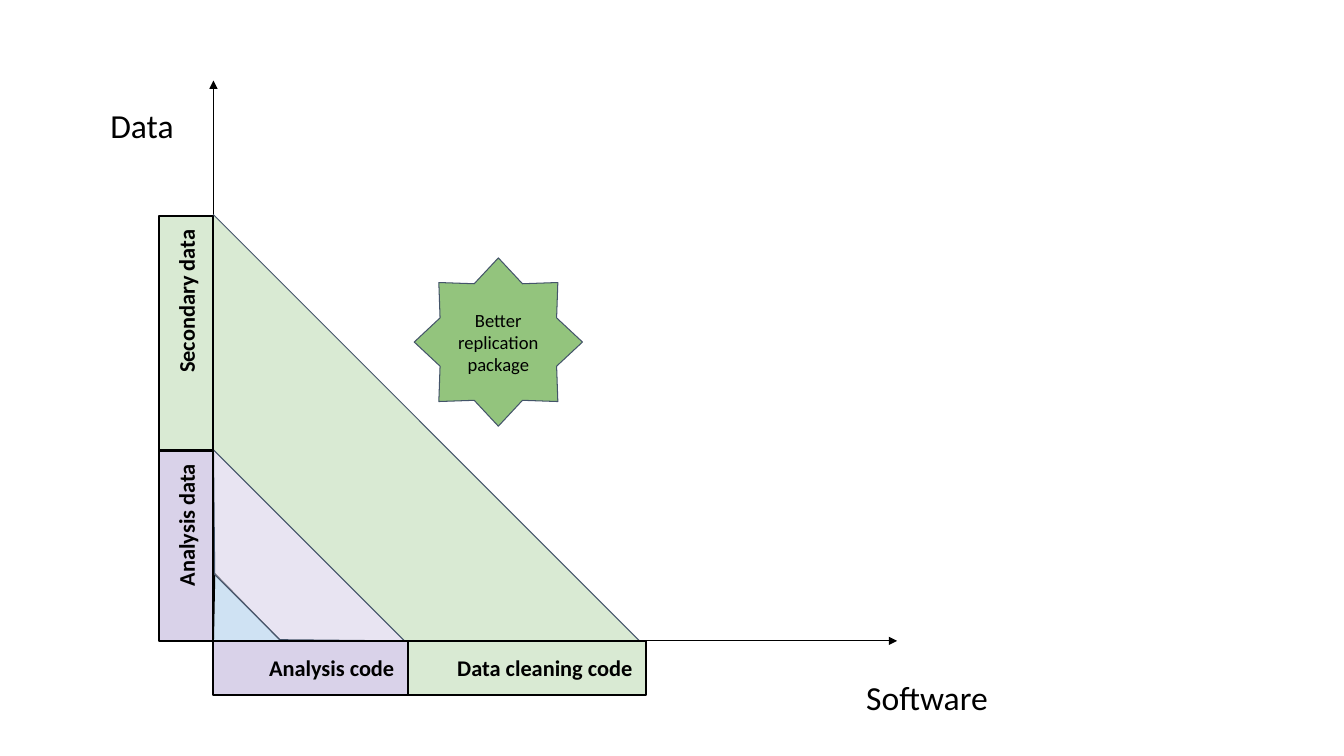
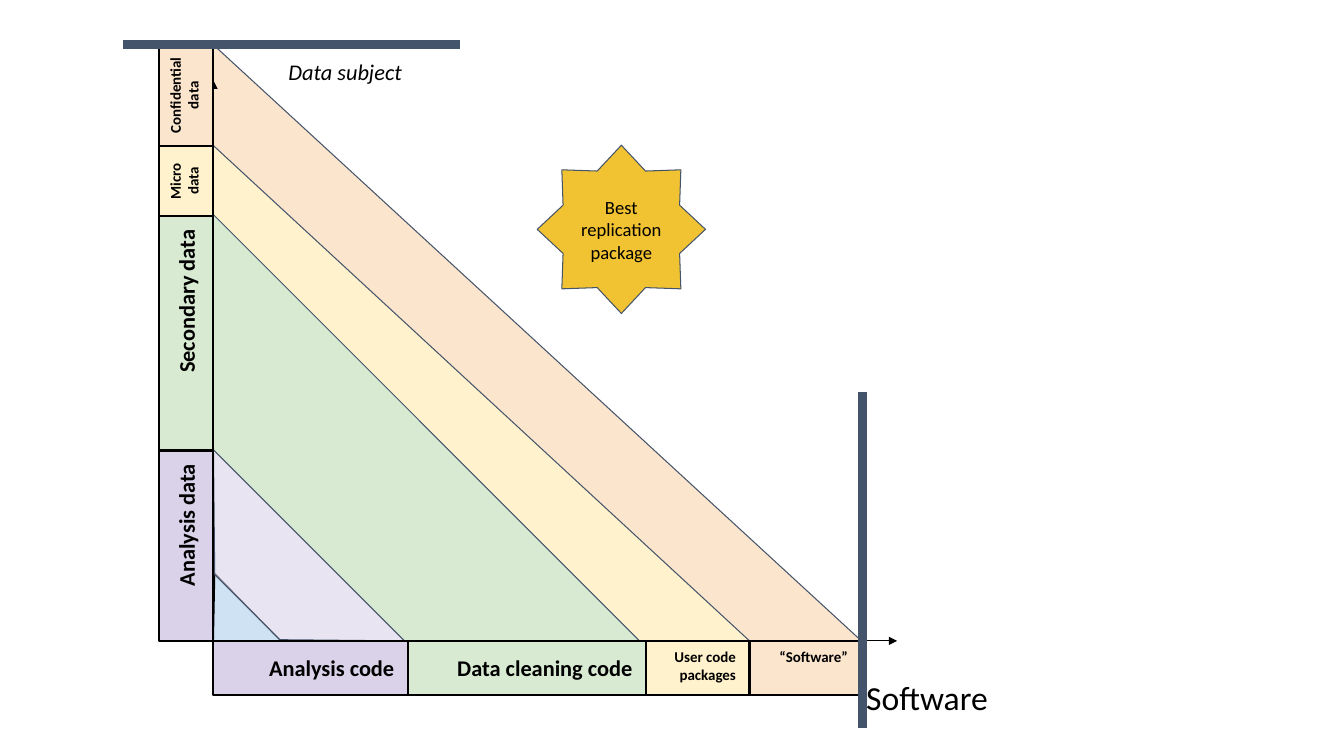
from itertools import accumulate
from math import sqrt
from typing import NamedTuple

from lxml import etree
from pptx import Presentation
from pptx.dml.color import RGBColor
from pptx.enum.shapes import MSO_CONNECTOR, MSO_SHAPE
from pptx.enum.text import MSO_ANCHOR, PP_ALIGN
from pptx.oxml.ns import qn
from pptx.util import Cm, Pt

RECTANGLE = MSO_SHAPE.RECTANGLE
TRIANGLE = MSO_SHAPE.ISOSCELES_TRIANGLE
TRAPEZOID = MSO_SHAPE.TRAPEZOID
STRIPE = MSO_SHAPE.DIAGONAL_STRIPE
STAR = MSO_SHAPE.STAR_8_POINT
STRAIGHT = MSO_CONNECTOR.STRAIGHT
TOP, MIDDLE = MSO_ANCHOR.TOP, MSO_ANCHOR.MIDDLE
LEFT, CENTER, RIGHT = PP_ALIGN.LEFT, PP_ALIGN.CENTER, PP_ALIGN.RIGHT

BLACK = RGBColor(0x00, 0x00, 0x00)
SLATE = RGBColor(0x44, 0x54, 0x6A)
BLUE = RGBColor(0xCF, 0xE2, 0xF3)
PURPLE = RGBColor(0xD9, 0xD2, 0xE9)
GREEN = RGBColor(0xD9, 0xEA, 0xD3)
YELLOW = RGBColor(0xFF, 0xF2, 0xCC)
ORANGE = RGBColor(0xFC, 0xE5, 0xCD)
STAR_GREEN = RGBColor(0x93, 0xC4, 0x7D)
STAR_GOLD = RGBColor(0xF1, 0xC2, 0x32)

FONT = "Calibri"
ORIGIN_X, ORIGIN_Y = 5.38, 16.15
BLOCK_DEPTH = 1.37
CORE_REACH = 1.7
PAD = 0.34
WIDE_INSETS = (PAD, PAD, PAD, PAD)
SMALL_INSETS = (PAD, 0.17, PAD, 0)
TIGHT_INSETS = (0, 0.17, 0, 0)


class Box(NamedTuple):
    """Area on the slide, in centimetres."""

    left: float
    top: float
    width: float
    height: float


class Block(NamedTuple):
    """Labelled stretch of an axis."""

    text: str
    length: float
    fill: RGBColor
    size: float = 16
    align: PP_ALIGN = RIGHT
    insets: tuple = WIDE_INSETS


CODE_BLOCKS = [
    Block("Analysis code", 4.9, PURPLE),
    Block("Data cleaning code", 6, GREEN),
    Block("User code packages", 2.61, YELLOW, 10.7, RIGHT, SMALL_INSETS),
    Block("“Software”", 2.82, ORANGE, 10.7, RIGHT, SMALL_INSETS),
]
DATA_BLOCKS = [
    Block("Analysis data", 4.8, PURPLE),
    Block("Secondary data", 5.9, GREEN),
    Block("Micro data", 1.78, YELLOW, 10.7, CENTER, SMALL_INSETS),
    Block("Confidential data", 2.54, ORANGE, 10.7, CENTER, TIGHT_INSETS),
]


def write_text(shape, text, size=16, bold=False, italic=False, align=LEFT,
               anchor=TOP, insets=WIDE_INSETS):
    """Put one formatted paragraph into a shape."""
    frame = shape.text_frame
    frame.word_wrap = True
    frame.vertical_anchor = anchor
    (frame.margin_left, frame.margin_top,
     frame.margin_right, frame.margin_bottom) = map(Cm, insets)
    paragraph = frame.paragraphs[0]
    paragraph.alignment = align
    run = paragraph.add_run()
    run.text = text
    run.font.name = FONT
    run.font.size = Pt(size)
    run.font.bold = bold
    run.font.italic = italic
    run.font.color.rgb = BLACK


def add_label(slide, box, text, **text_format):
    """Add a text box."""
    write_text(slide.shapes.add_textbox(*map(Cm, box)), text, **text_format)


def add_filled(slide, kind, box, fill, line=SLATE, line_width=0.75,
               rotation=0, adjustment=None):
    """Add a preset shape; a quarter turn keeps the visible box."""
    left, top, width, height = box
    if rotation == 270:
        left += (width - height) / 2
        top += (height - width) / 2
        width, height = height, width
    shape = slide.shapes.add_shape(
        kind, Cm(left), Cm(top), Cm(width), Cm(height))
    shape.shadow.inherit = False
    shape.rotation = rotation
    shape.fill.solid()
    shape.fill.fore_color.rgb = fill
    shape.line.color.rgb = line
    shape.line.width = Pt(line_width)
    if adjustment is not None:
        shape.adjustments[0] = adjustment
    return shape


def set_opacity(shape, percent):
    """Make a solid fill partly transparent."""
    color = shape.fill._xPr.find(qn("a:solidFill"))[0]
    etree.SubElement(color, qn("a:alpha")).set("val", str(percent * 1000))


def add_line(slide, start, end, color=BLACK, width=0.75, arrow=False):
    """Add a straight line, with an arrowhead at its end if asked."""
    connector = slide.shapes.add_connector(STRAIGHT, *map(Cm, start + end))
    connector.line.color.rgb = color
    connector.line.width = Pt(width)
    if arrow:
        outline = connector.line._get_or_add_ln()
        etree.SubElement(outline, qn("a:tailEnd")).set("type", "triangle")
    etree.SubElement(connector._element.spPr, qn("a:effectLst"))


def draw_axes(slide):
    """Draw both arrows and the name of the software axis."""
    origin = (ORIGIN_X, ORIGIN_Y)
    add_line(slide, origin, (ORIGIN_X, 2.03), arrow=True)
    add_line(slide, origin, (22.61, ORIGIN_Y), arrow=True)
    add_label(slide, Box(21.49, 16.71, 11, 1.7), "Software", size=24)


def draw_stripe(slide, reach_x, reach_y, fill):
    """Draw an outer band spanning the given reach on both axes."""
    box = Box(ORIGIN_X, ORIGIN_Y - reach_y, reach_x, reach_y)
    add_filled(slide, STRIPE, box, fill, rotation=270, adjustment=0.79)


def draw_band(slide, reach, depth, fill, adjustment):
    """Draw a 45 degree band whose long edge meets both axes at reach."""
    width = reach * sqrt(2)
    offset = (reach - depth / sqrt(2)) / 2
    box = Box(ORIGIN_X + offset - width / 2,
              ORIGIN_Y - offset - depth / 2, width, depth)
    return add_filled(slide, TRAPEZOID, box, fill, rotation=225,
                      adjustment=adjustment)


def draw_core(slide):
    """Draw the inner triangle and the two bands around it."""
    box = Box(ORIGIN_X, ORIGIN_Y - CORE_REACH, CORE_REACH, CORE_REACH)
    add_filled(slide, TRIANGLE, box, BLUE, BLACK, adjustment=0.02)
    set_opacity(draw_band(slide, 4.83, 2.21, PURPLE, 1.02), 58)
    draw_band(slide, 10.74, 4.19, GREEN, 1)


def draw_block(slide, box, block, rotation=0):
    """Draw one labelled axis block."""
    shape = add_filled(slide, RECTANGLE, box, block.fill, BLACK, 1.5, rotation)
    write_text(shape, block.text, size=block.size, bold=True,
               align=block.align, insets=block.insets)


def reaches(blocks):
    """Return the distance from the origin to the end of each block."""
    return list(accumulate(block.length for block in blocks))


def draw_blocks(slide, count):
    """Stack the first blocks outwards along both axes."""
    code, data = CODE_BLOCKS[:count], DATA_BLOCKS[:count]
    for block, reach in zip(code, reaches(code)):
        box = Box(ORIGIN_X + reach - block.length, ORIGIN_Y,
                  block.length, BLOCK_DEPTH)
        draw_block(slide, box, block)
    for block, reach in zip(data, reaches(data)):
        box = Box(ORIGIN_X - BLOCK_DEPTH, ORIGIN_Y - reach,
                  BLOCK_DEPTH, block.length)
        draw_block(slide, box, block, 270)


def draw_star(slide, left, top, text, fill):
    """Draw the star that rates the package."""
    star = add_filled(slide, STAR, Box(left, top, 4.24, 4.24), fill)
    write_text(star, text, size=13.3, align=CENTER, anchor=MIDDLE)


def build_better_slide(slide):
    """Build the slide with secondary data and cleaning code."""
    draw_axes(slide)
    add_label(slide, Box(2.44, 2.31, 2.67, 1.7), "Data", size=24)
    draw_core(slide)
    draw_blocks(slide, 2)
    draw_star(slide, 10.44, 6.5, "Better replication package", STAR_GREEN)


def build_best_slide(slide):
    """Build the slide that reaches the limits of both axes."""
    code, data = reaches(CODE_BLOCKS), reaches(DATA_BLOCKS)
    for index in (3, 2):
        draw_stripe(slide, code[index], data[index], CODE_BLOCKS[index].fill)
    draw_axes(slide)
    draw_core(slide)
    draw_blocks(slide, 4)
    add_line(slide, (21.74, 9.88), (21.74, 18.34), SLATE, 6)
    add_line(slide, (3.1, 1.12), (11.58, 1.12), SLATE, 6)
    add_label(slide, Box(6.93, 1.12, 6.88, 1.37), "Data subject", italic=True)
    draw_star(slide, 13.54, 3.66, "Best replication package", STAR_GOLD)


def main():
    """Create and save the presentation."""
    presentation = Presentation()
    presentation.slide_width = Cm(33.87)
    presentation.slide_height = Cm(19.05)
    for build in (build_better_slide, build_best_slide):
        build(presentation.slides.add_slide(presentation.slide_layouts[6]))
    presentation.save("out.pptx")


if __name__ == "__main__":
    main()
